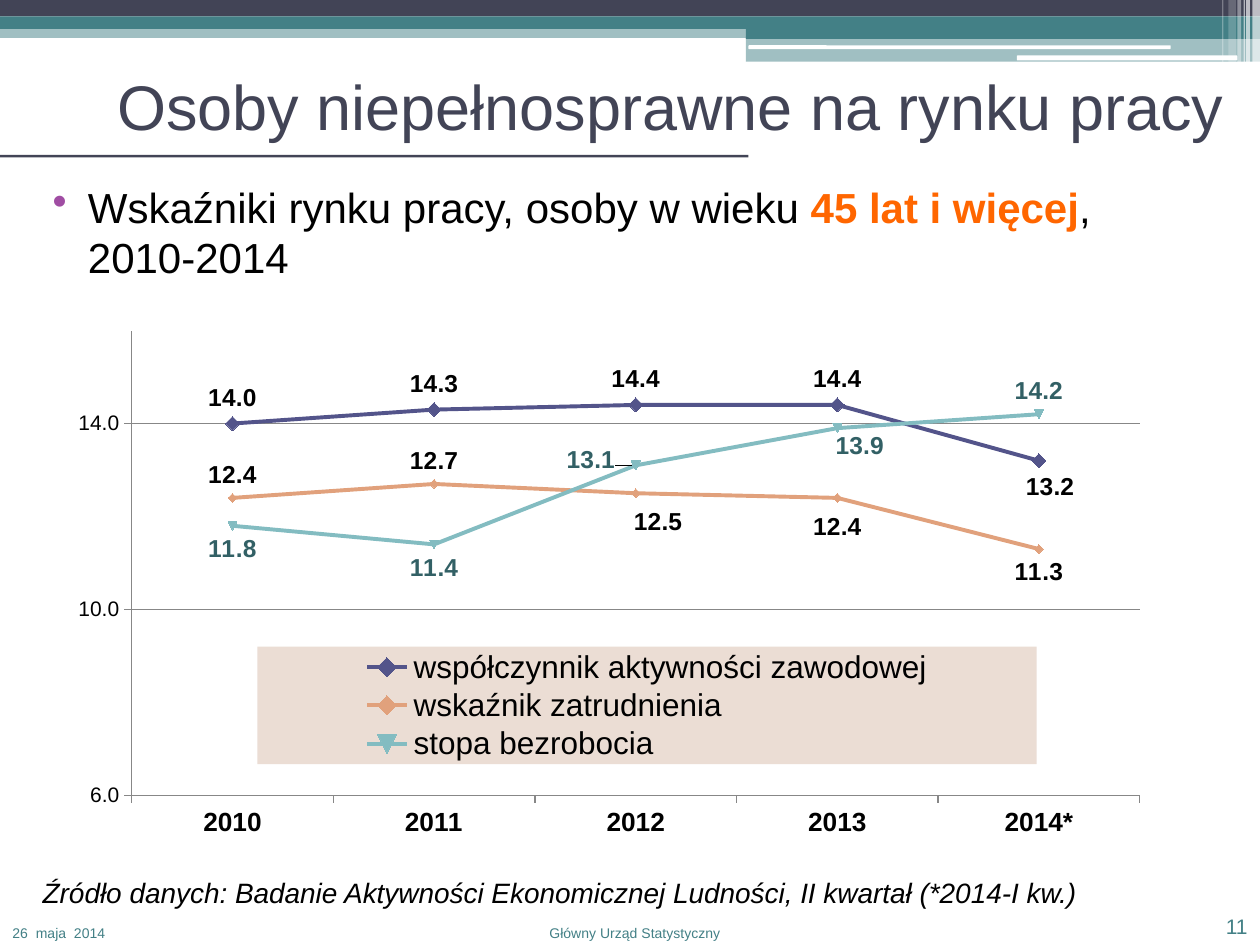
from dataclasses import dataclass

from lxml.etree import SubElement
from pptx import Presentation
from pptx.chart.data import CategoryChartData
from pptx.dml.color import RGBColor
from pptx.enum.chart import (XL_CHART_TYPE, XL_LABEL_POSITION, XL_LEGEND_POSITION,
                             XL_MARKER_STYLE, XL_TICK_MARK)
from pptx.enum.shapes import MSO_SHAPE
from pptx.enum.text import MSO_ANCHOR, MSO_AUTO_SIZE, PP_ALIGN
from pptx.oxml import parse_xml
from pptx.oxml.ns import nsdecls, qn
from pptx.util import Inches, Pt


@dataclass(frozen=True)
class Theme:
    font: str = "Arial"
    dark: str = "424456"
    teal: str = "438086"
    white: str = "FFFFFF"
    black: str = "000000"
    accent: str = "FF6600"
    bullet: str = "A04DA3"
    axis: str = "878787"
    legend: str = "EBDDD4"
    title: int = 36
    body: int = 24
    chart: int = 18
    source: int = 16
    category: int = 15
    label: int = 14
    small: int = 12
    footer: int = 8


THEME = Theme()
ABOVE, BELOW, LEFT = XL_LABEL_POSITION.ABOVE, XL_LABEL_POSITION.BELOW, XL_LABEL_POSITION.LEFT

YEARS = ["2010", "2011", "2012", "2013", "2014*"]
# name, values, line colour, label colour, label side, marker (style, size),
# moved labels {point: (side, shift right, shift down)}
SERIES = [
    ("współczynnik aktywności zawodowej", (14, 14.3, 14.4, 14.4, 13.2), "53548A", THEME.black,
     ABOVE, (XL_MARKER_STYLE.DIAMOND, 8), {4: (BELOW, 0.01, 0)}),
    ("wskaźnik zatrudnienia", (12.4, 12.7, 12.5, 12.4, 11.3), "E1A17C", THEME.black,
     ABOVE, (None, 5), {2: (BELOW, 0.02, 0.01), 3: (BELOW, 0, 0.01), 4: (BELOW, 0, 0)}),
    ("stopa bezrobocia", (11.8, 11.4, 13.1, 13.9, 14.2), "83BCC1", "326065",
     BELOW, (None, 5), {2: (LEFT, -0.01, -0.01), 3: (BELOW, 0.02, -0.01), 4: (ABOVE, 0, 0)}),
]


def color(value):
    return RGBColor.from_string(value)


def style_font(font, size, value=THEME.black, bold=False, italic=False):
    font.name, font.size, font.bold, font.italic = THEME.font, Pt(size), bold, italic
    font.color.rgb = color(value)


def add_bar(page, box, fill, opacity=100, kind=MSO_SHAPE.RECTANGLE):
    bar = page.shapes.add_shape(kind, *map(Inches, box))
    bar.shadow.inherit = False
    bar.line.fill.background()
    bar.fill.solid()
    bar.fill.fore_color.rgb = color(fill)
    if opacity < 100:
        tint = bar.fill._xPr.find(qn("a:solidFill"))[0]
        SubElement(tint, qn("a:alpha"), val=str(opacity * 1000))


def add_text(page, box, text, size, value, align=PP_ALIGN.LEFT, anchor=MSO_ANCHOR.TOP, italic=False):
    frame = page.shapes.add_textbox(*map(Inches, box)).text_frame
    frame.word_wrap = True
    frame.vertical_anchor = anchor
    para = frame.paragraphs[0]
    para.text = text
    para.alignment = align
    style_font(para.font, size, value, italic=italic)
    return para


def add_banner(page, box):
    left, top, width, _ = box
    right, split = left + width, left + 5.92
    # Full-width and right-hand bands
    add_bar(page, (left, top + 0.21, width, 0.09), THEME.teal, 50)
    add_bar(page, (left, top, width, 0.13), THEME.dark)
    add_bar(page, (left, top + 0.13, width, 0.1), THEME.teal)
    add_bar(page, (split, top + 0.21, right - split, 0.1), THEME.teal)
    add_bar(page, (split, top + 0.29, right - split, 0.2), THEME.teal, 50)
    # White streaks
    for x, y, length, height in ((5.94, 0.36, 3.35, 0.03), (8.07, 0.44, 1.75, 0.04)):
        add_bar(page, (left + x, top + y, length, height), THEME.white,
                kind=MSO_SHAPE.ROUNDED_RECTANGLE)
    # Translucent stripes at the right edge
    for inset, stripe, height, opacity in ((0.06, 0.06, 0.68, 65), (0.11, 0.03, 0.68, 65),
                                           (0.13, 0.01, 0.68, 60), (0.18, 0.03, 0.68, 40),
                                           (0.25, 0.06, 0.64, 20), (0.3, 0.01, 0.64, 30)):
        add_bar(page, (right - inset, top, stripe, height), THEME.white, opacity)


def add_title(page, box):
    title = page.shapes.title
    title.left, title.top, title.width, title.height = map(Inches, box)
    frame = title.text_frame
    frame.text = "Osoby niepełnosprawne na rynku pracy"
    frame.auto_size = MSO_AUTO_SIZE.NONE
    frame.vertical_anchor = MSO_ANCHOR.MIDDLE
    para = frame.paragraphs[0]
    para.alignment = PP_ALIGN.LEFT
    style_font(para.font, THEME.title, THEME.dark)
    # Rule under the title
    add_bar(page, (0, 1.23, 5.94, 0.02), THEME.dark)


def set_indent(para, margin, indent=0.0):
    properties = para._p.get_or_add_pPr()
    properties.set("marL", str(Inches(margin)))
    properties.set("indent", str(Inches(indent)))
    return properties


def add_subtitle(page, box):
    frame = page.shapes.add_textbox(*map(Inches, box)).text_frame
    frame.word_wrap = True
    para = frame.paragraphs[0]
    properties = set_indent(para, 0.4, -0.28)
    bullet_color = SubElement(properties, qn("a:buClr"))
    SubElement(bullet_color, qn("a:srgbClr"), val=THEME.bullet)
    SubElement(properties, qn("a:buChar"), char="•")
    style_font(para.font, THEME.body)
    para.add_run().text = "Wskaźniki rynku pracy, osoby w wieku "
    span = para.add_run()
    span.text = "45 lat i więcej"
    span.font.bold = True
    span.font.color.rgb = color(THEME.accent)
    para.add_run().text = ", "
    para.add_line_break()
    para.add_run().text = "2010-2014"


def manual_layout(**parts):
    items = "".join(f'<c:{name} val="{value}"/>' for name, value in parts.items())
    return parse_xml(f'<c:layout {nsdecls("c")}><c:manualLayout>{items}</c:manualLayout></c:layout>')


def style_axes(chart):
    values, years = chart.value_axis, chart.category_axis
    values.minimum_scale, values.maximum_scale, values.major_unit = 6, 16, 4
    values.has_major_gridlines = True
    values.tick_labels.number_format = "0.0"
    values.tick_labels.number_format_is_linked = False
    style_font(values.tick_labels.font, THEME.small)
    style_font(years.tick_labels.font, THEME.category, bold=True)
    for axis in (values, years):
        axis.major_tick_mark = XL_TICK_MARK.CROSS if axis is values else XL_TICK_MARK.OUTSIDE
    for line in (values.format.line, years.format.line, values.major_gridlines.format.line):
        line.color.rgb = color(THEME.axis)
        line.width = Pt(0.75)


def style_series(series, line_color, label_color, side, marker, moved):
    series.smooth = False
    series.format.line.color.rgb = color(line_color)
    series.format.line.width = Pt(2.25)
    style, series.marker.size = marker
    if style is not None:
        series.marker.style = style
    series.marker.format.fill.solid()
    series.marker.format.fill.fore_color.rgb = color(line_color)
    series.marker.format.line.color.rgb = color(line_color)
    labels = series.data_labels
    labels.show_value = True
    labels.position = side
    labels.number_format, labels.number_format_is_linked = "0.0", False
    style_font(labels.font, THEME.label, label_color, bold=True)
    for index, (point_side, right, down) in moved.items():
        label = series.points[index].data_label
        style_font(label.font, THEME.label, label_color, bold=True)
        label.position = point_side
        if right or down:
            label._dLbl.insert(1, manual_layout(x=right, y=down))


def add_rates_chart(page, box):
    data = CategoryChartData(number_format="0.0")
    data.categories = YEARS
    for name, values, *_ in SERIES:
        data.add_series(name, values)
    chart = page.shapes.add_chart(XL_CHART_TYPE.LINE_MARKERS, *map(Inches, box), data).chart
    chart.has_title = False
    style_font(chart.font, THEME.chart)
    chart.plots[0].vary_by_categories = False
    style_axes(chart)
    for series, (_, _, *look) in zip(chart.plots[0].series, SERIES):
        style_series(series, *look)
    # Plot area
    area = chart._chartSpace.chart.plotArea
    for old in area.findall(qn("c:layout")):
        area.remove(old)
    area.insert(0, manual_layout(layoutTarget="inner", xMode="edge", yMode="edge",
                                 x=0.086, y=0.037, w=0.899, h=0.831))
    # Legend on a tinted panel inside the plot
    chart.has_legend = True
    legend = chart.legend
    legend.position = XL_LEGEND_POSITION.RIGHT
    legend.include_in_layout = True
    style_font(legend.font, THEME.chart)
    element = legend._element
    for old in element.findall(qn("c:layout")):
        element.remove(old)
    element.find(qn("c:legendPos")).addnext(
        manual_layout(xMode="edge", yMode="edge", x=0.198, y=0.602, w=0.695, h=0.21))
    element.find(qn("c:txPr")).addprevious(parse_xml(
        f'<c:spPr {nsdecls("c", "a")}><a:solidFill><a:srgbClr val="{THEME.legend}"/>'
        '</a:solidFill></c:spPr>'))


def add_footer(page, box):
    left, top, width, height = box
    add_text(page, (left, top, 1.06, height), "26  maja  2014", THEME.footer, THEME.teal)
    add_text(page, (left + 3.82, top, 2.44, height), "Główny Urząd Statystyczny",
             THEME.footer, THEME.teal, PP_ALIGN.CENTER)
    add_text(page, (left + width - 0.83, top - 0.08, 0.83, height + 0.08), "11",
             THEME.small, THEME.teal, PP_ALIGN.RIGHT, MSO_ANCHOR.BOTTOM)


def main():
    deck = Presentation()
    deck.slide_width, deck.slide_height = Inches(10), Inches(7.5)
    page = deck.slides.add_slide(deck.slide_layouts[5])
    add_banner(page, (0, 0, 10, 0.68))
    add_title(page, (0.83, 0.52, 9.06, 0.63))
    add_subtitle(page, (0.2, 1.39, 9, 0.87))
    add_rates_chart(page, (0.28, 2.46, 8.9, 4.44))
    source = add_text(page, (0.12, 6.9, 9.69, 0.47),
                      "Źródło danych: Badanie Aktywności Ekonomicznej Ludności, "
                      "II kwartał (*2014-I kw.)", THEME.source, THEME.black, italic=True)
    set_indent(source, 0.12)
    add_footer(page, (0, 7.29, 10, 0.21))
    deck.save("out.pptx")


if __name__ == "__main__":
    main()
